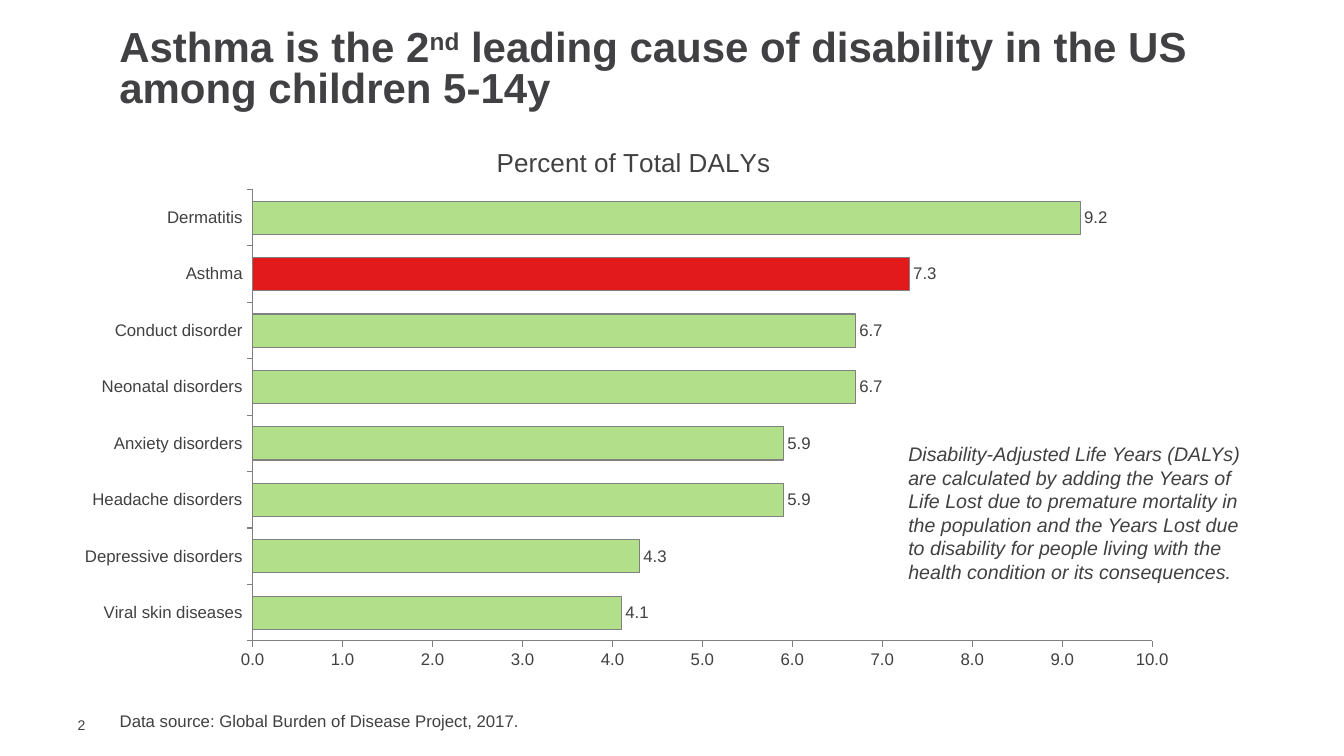
from lxml import etree
from pptx import Presentation
from pptx.chart.data import CategoryChartData
from pptx.dml.color import RGBColor
from pptx.enum.chart import XL_CHART_TYPE, XL_LABEL_POSITION, XL_TICK_MARK
from pptx.enum.text import MSO_ANCHOR, MSO_AUTO_SIZE, PP_ALIGN
from pptx.oxml.ns import qn
from pptx.util import Emu, Pt

BAR = XL_CHART_TYPE.BAR_CLUSTERED
OUTSIDE_END = XL_LABEL_POSITION.OUTSIDE_END
TICK_OUT, TICK_NONE = XL_TICK_MARK.OUTSIDE, XL_TICK_MARK.NONE
TOP, MIDDLE = MSO_ANCHOR.TOP, MSO_ANCHOR.MIDDLE
NO_AUTOFIT, LEFT = MSO_AUTO_SIZE.NONE, PP_ALIGN.LEFT

EMU_PER_PX = 9525
FONT = "Arial"
NUMBER_FORMAT = "#,##0.0"
COLORS = {"text": "414042", "bar": "B2DF8A", "highlight": "E31A1C", "line": "808080"}
CHART_TITLE = "Percent of Total DALYs"
HIGHLIGHTED = "Asthma"
DALY_SHARES = {
    "Viral skin diseases": 4.1,
    "Depressive disorders": 4.3,
    "Headache disorders": 5.9,
    "Anxiety disorders": 5.9,
    "Neonatal disorders": 6.7,
    "Conduct disorder": 6.7,
    "Asthma": 7.3,
    "Dermatitis": 9.2,
}
DALY_NOTE = (
    "Disability-Adjusted Life Years (DALYs) are calculated by adding the Years of "
    "Life Lost due to premature mortality in the population and the Years Lost due "
    "to disability for people living with the health condition or its consequences."
)


class SlideBuilder:
    """Hold the style and the current slide, and add its elements."""

    def __init__(self, presentation):
        self.slide = presentation.slides.add_slide(presentation.slide_layouts[5])

    def box(self, *lengths):
        return [Emu(length * EMU_PER_PX) for length in lengths]

    def color(self, name):
        return RGBColor.from_string(COLORS[name])

    def style_font(self, font, size, bold=False, italic=False):
        font.name, font.size = FONT, Pt(size)
        font.bold, font.italic = bold, italic
        font.color.rgb = self.color("text")

    def style_line(self, line):
        line.color.rgb = self.color("line")
        line.width = Pt(0.75)

    def add_run(self, paragraph, text, size, baseline=0, **style):
        run = paragraph.add_run()
        run.text = text
        self.style_font(run.font, size, **style)
        if baseline:
            run.font._element.set("baseline", str(baseline * 1000))

    def add_title(self, bounds, parts):
        title = self.slide.shapes.title
        title.left, title.top, title.width, title.height = self.box(*bounds)
        frame = title.text_frame
        frame.word_wrap, frame.auto_size = True, NO_AUTOFIT
        frame.vertical_anchor = MIDDLE
        paragraph = frame.paragraphs[0]
        paragraph.alignment, paragraph.line_spacing = LEFT, 0.8
        for text, baseline in parts:
            self.add_run(paragraph, text, 30, baseline, bold=True)

    def add_text(self, bounds, text, size, anchor=TOP, insets=(10, 5, 10, 5), **style):
        frame = self.slide.shapes.add_textbox(*self.box(*bounds)).text_frame
        frame.word_wrap, frame.vertical_anchor = True, anchor
        (frame.margin_left, frame.margin_top,
         frame.margin_right, frame.margin_bottom) = self.box(*insets)
        self.add_run(frame.paragraphs[0], text, size, **style)

    def manual_layout(self, parent, position, **settings):
        for old in parent.findall(qn("c:layout")):
            parent.remove(old)
        layout = etree.Element(qn("c:layout"))
        manual = etree.SubElement(layout, qn("c:manualLayout"))
        for tag, value in settings.items():
            etree.SubElement(manual, qn("c:" + tag)).set("val", str(value))
        parent.insert(position, layout)

    def style_axis(self, axis):
        axis.has_major_gridlines = False
        axis.major_tick_mark, axis.minor_tick_mark = TICK_OUT, TICK_NONE
        self.style_font(axis.tick_labels.font, 12)
        self.style_line(axis.format.line)

    def fill_bar(self, bar_format, name):
        bar_format.fill.solid()
        bar_format.fill.fore_color.rgb = self.color(name)
        self.style_line(bar_format.line)

    def add_bar_chart(self, bounds, title, shares, highlighted):
        data = CategoryChartData(number_format=NUMBER_FORMAT)
        data.categories = list(shares)
        data.add_series(title, list(shares.values()))
        chart = self.slide.shapes.add_chart(BAR, *self.box(*bounds), data).chart
        chart.has_legend = False
        self.style_font(chart.font, 10)

        chart.has_title = True
        paragraph = chart.chart_title.text_frame.paragraphs[0]
        self.add_run(paragraph, title, 18.6)
        chart.chart_title.include_in_layout = False
        self.manual_layout(chart.chart_title._element, 1,
                           xMode="edge", yMode="edge", x=0.38, y=0.04)
        self.manual_layout(chart.plots[0]._element.getparent(), 0,
                           layoutTarget="inner", xMode="edge", yMode="edge",
                           x=0.168, y=0.128, w=0.797, h=0.802)

        self.style_axis(chart.category_axis)
        axis = chart.value_axis
        self.style_axis(axis)
        axis.minimum_scale, axis.maximum_scale, axis.major_unit = 0, 10, 1
        axis.tick_labels.number_format = NUMBER_FORMAT
        axis.tick_labels.number_format_is_linked = False

        plot = chart.plots[0]
        plot.gap_width, plot.vary_by_categories = 70, False
        series = plot.series[0]
        self.fill_bar(series.format, "bar")
        self.fill_bar(series.points[list(shares).index(highlighted)].format, "highlight")
        labels = series.data_labels
        labels.show_value, labels.position = True, OUTSIDE_END
        labels.number_format, labels.number_format_is_linked = NUMBER_FORMAT, False
        self.style_font(labels.font, 12)


def main():
    presentation = Presentation()
    presentation.slide_width = Emu(1280 * EMU_PER_PX)
    presentation.slide_height = Emu(720 * EMU_PER_PX)
    builder = SlideBuilder(presentation)
    builder.add_text((64, 682, 41, 16), "2", 10, anchor=MIDDLE, insets=(10, 0, 0, 0))
    builder.add_text((104, 672, 952, 29),
                     "Data source: Global Burden of Disease Project, 2017.", 12)
    builder.add_title((104, 24, 1072, 87), [
        ("Asthma is the 2", 0),
        ("nd", 30),
        (" leading cause of disability in the US among children 5-14y", 0),
    ])
    builder.add_bar_chart((60, 112, 1075, 536), CHART_TITLE, DALY_SHARES, HIGHLIGHTED)
    builder.add_text((855, 416, 352, 145), DALY_NOTE, 14, italic=True)
    presentation.save("out.pptx")


if __name__ == "__main__":
    main()
